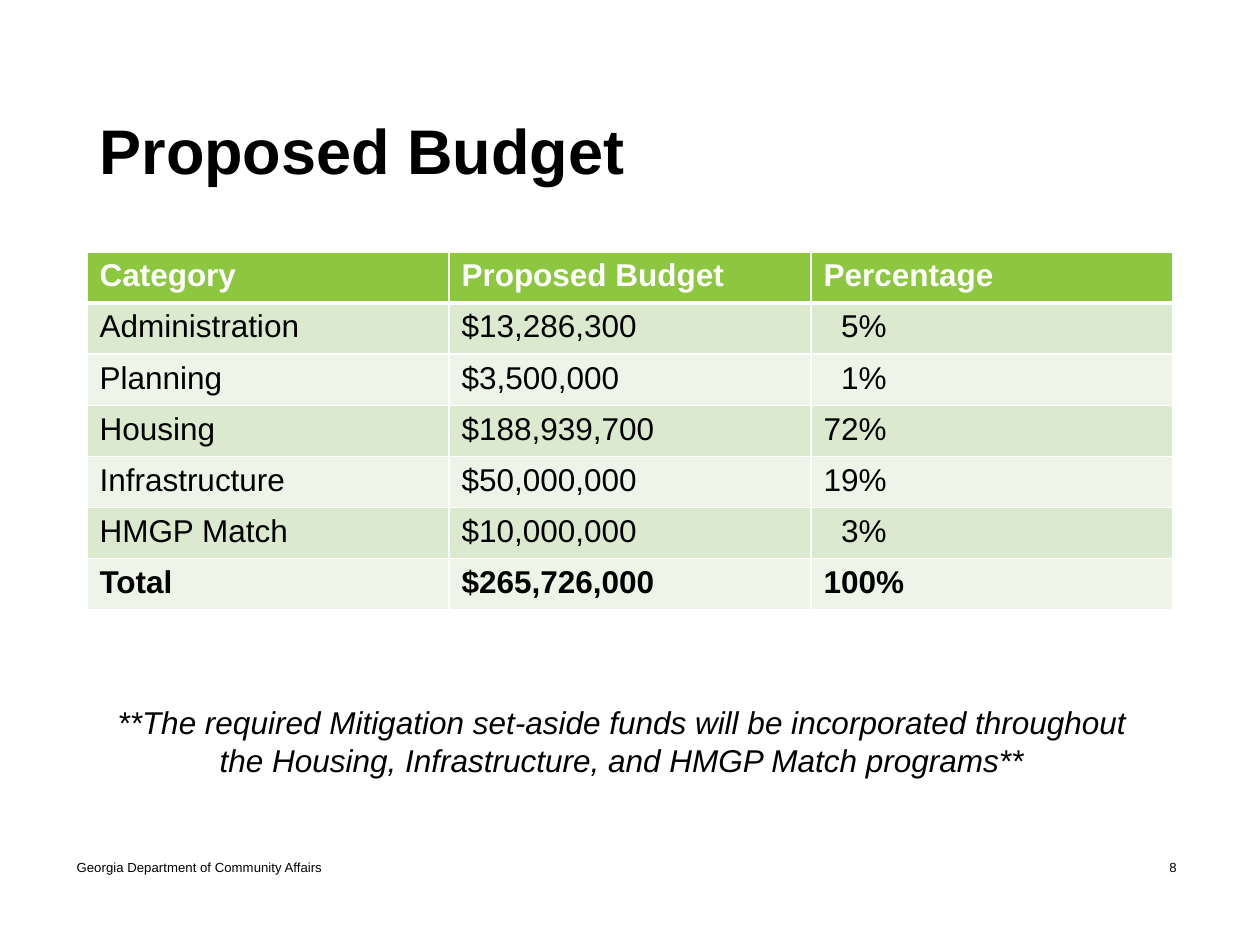
from lxml import etree
from pptx import Presentation
from pptx.dml.color import RGBColor
from pptx.enum.text import MSO_ANCHOR, MSO_AUTO_SIZE, PP_ALIGN
from pptx.oxml.ns import qn
from pptx.util import Inches, Pt

LEFT, CENTER = PP_ALIGN.LEFT, PP_ALIGN.CENTER
TOP, MIDDLE = MSO_ANCHOR.TOP, MSO_ANCHOR.MIDDLE
NO_AUTOFIT = MSO_AUTO_SIZE.NONE
TITLE_ONLY = 5
FONT = "Arial"
COLORS = {
    "text": "000000",
    "white": "FFFFFF",
    "header": "8DC63F",
    "odd": "DBEACF",
    "even": "EEF5E8",
}
BUDGET = [
    ("Category", "Proposed Budget", "Percentage"),
    ("Administration", "$13,286,300", "5%"),
    ("Planning", "$3,500,000", "1%"),
    ("Housing", "$188,939,700", "72%"),
    ("Infrastructure", "$50,000,000", "19%"),
    ("HMGP Match", "$10,000,000", "3%"),
    ("Total", "$265,726,000", "100%"),
]


def rgb(name):
    return RGBColor.from_string(COLORS[name])


def write(frame, text, size, color="text", bold=False, italic=False, align=LEFT):
    paragraph = frame.paragraphs[0]
    paragraph.alignment = align
    run = paragraph.add_run()
    run.text = text
    run.font.name = FONT
    run.font.size = Pt(size)
    run.font.bold = bold
    run.font.italic = italic
    run.font.color.rgb = rgb(color)
    return paragraph


def add_title(slide, text):
    title = slide.shapes.title
    title.left, title.top = Inches(0.69), Inches(0.6)
    title.width, title.height = Inches(8.61), Inches(1.25)
    frame = title.text_frame
    frame.auto_size = NO_AUTOFIT
    frame.vertical_anchor = MIDDLE
    write(frame, text, 36, bold=True).line_spacing = 0.9


def add_label(slide, text, box, size, anchor=MIDDLE, align=LEFT, italic=False):
    frame = slide.shapes.add_textbox(*map(Inches, box)).text_frame
    frame.word_wrap = True
    frame.vertical_anchor = anchor
    write(frame, text, size, align=align, italic=italic)


def add_borders(cell, top, bottom):
    properties = cell._tc.get_or_add_tcPr()
    for side, points in (("L", 1), ("R", 1), ("T", top), ("B", bottom)):
        line = etree.SubElement(properties, qn(f"a:ln{side}"), w=str(Pt(points)))
        fill = etree.SubElement(line, qn("a:solidFill"))
        etree.SubElement(fill, qn("a:srgbClr"), val=COLORS["white"])


def format_cell(cell, text, row):
    is_header = row == 0
    is_total = row == len(BUDGET) - 1
    add_borders(cell, 3 if row == 1 else 1, 3 if is_header else 1)
    cell.fill.solid()
    cell.fill.fore_color.rgb = rgb("header" if is_header else "odd" if row % 2 else "even")
    is_single_digit = text.endswith("%") and len(text) == 2
    cell.margin_left = Inches(0.24 if is_single_digit else 0.1)
    write(cell.text_frame, text, 18, "white" if is_header else "text", is_header or is_total)


def add_budget_table(slide):
    budget = slide.shapes.add_table(
        len(BUDGET), len(BUDGET[0]),
        Inches(0.69), Inches(2), Inches(8.62), Inches(2.84),
    ).table
    for row, values in enumerate(BUDGET):
        for column, text in enumerate(values):
            format_cell(budget.cell(row, column), text, row)


def main():
    deck = Presentation()
    deck.slide_width, deck.slide_height = Inches(10), Inches(7.5)
    slide = deck.slides.add_slide(deck.slide_layouts[TITLE_ONLY])
    add_label(slide, "Georgia Department of Community Affairs", (0.51, 6.68, 3.38, 0.4), 7.5)
    add_label(slide, "8", (9.06, 6.51, 0.5, 0.74), 7.5, align=CENTER)
    add_budget_table(slide)
    add_title(slide, "Proposed Budget")
    add_label(
        slide,
        "**The required Mitigation set-aside funds will be incorporated throughout "
        "the Housing, Infrastructure, and HMGP Match programs**",
        (0.77, 5.53, 8.33, 0.71), 18, anchor=TOP, align=CENTER, italic=True,
    )
    deck.save("out.pptx")


if __name__ == "__main__":
    main()
